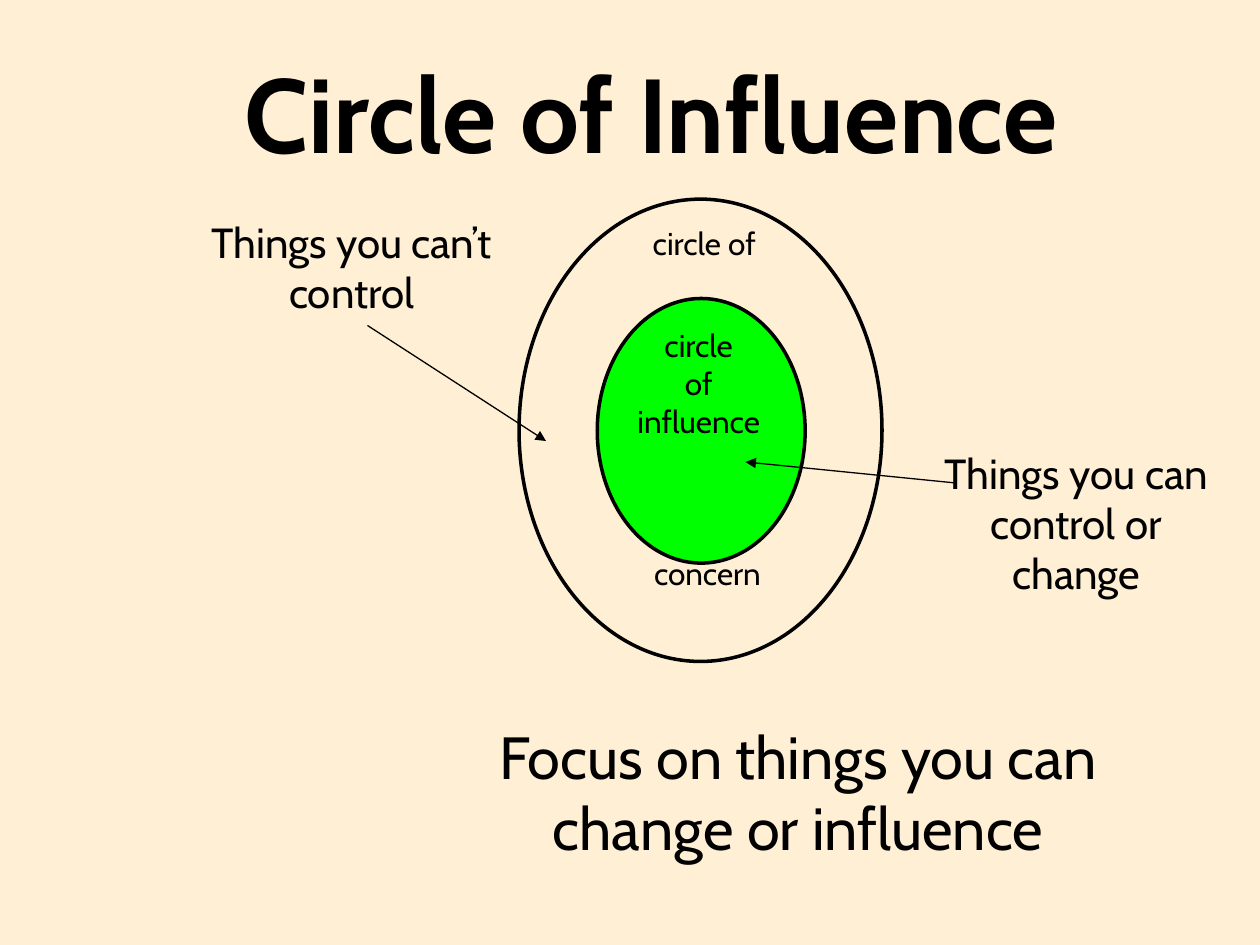
"""Build the Circle of Influence slide."""
from dataclasses import dataclass
from typing import Optional

from pptx import Presentation
from pptx.dml.color import RGBColor
from pptx.enum.shapes import MSO_CONNECTOR as Conn, MSO_SHAPE as Shape
from pptx.enum.text import MSO_ANCHOR as Anchor, MSO_AUTO_SIZE as AutoSize, PP_ALIGN as Align
from pptx.oxml.ns import qn
from pptx.util import Pt
from lxml.etree import SubElement

CREAM = RGBColor(0xFF, 0xEF, 0xD5)
GREEN = RGBColor(0x00, 0xFF, 0x00)
BLACK = RGBColor(0x00, 0x00, 0x00)
FONT = "Cabin"


@dataclass(frozen=True)
class Box:
    left: float
    top: float
    width: float
    height: float

    def lengths(self) -> tuple:
        return Pt(self.left), Pt(self.top), Pt(self.width), Pt(self.height)


@dataclass(frozen=True)
class Label:
    box: Box
    lines: tuple
    size: int
    wrap: bool = True


@dataclass(frozen=True)
class Circle:
    box: Box
    fill: Optional[RGBColor] = None


@dataclass(frozen=True)
class Arrow:
    x1: float
    y1: float
    x2: float
    y2: float


TITLE = Label(Box(48, 24, 648, 79.2), ("Circle of Influence",), 60)
CIRCLES = (
    Circle(Box(341.3, 170.6, 118.8, 151.2), GREEN),
    Circle(Box(296.6, 113.8, 207.4, 264.2)),
)
CIRCLE_LABELS = (
    Label(Box(356.4, 182.9, 85.7, 72), ("circle", "of", "influence"), 18, False),
    Label(Box(364.3, 124.6, 76.3, 28.8), ("circle of",), 18, False),
    Label(Box(365.8, 313.2, 77, 28.8), ("concern",), 18, False),
)
NOTES = (
    Label(Box(228, 408, 456, 88.6), ("Focus on things you can change or influence",), 34),
    Label(Box(108, 120, 186, 64.8), ("Things you can’t control",), 24),
    Label(Box(528, 252, 174, 93.6), ("Things you can control or change",), 24),
)
ARROWS = (Arrow(210, 186, 312, 252), Arrow(546, 276, 426, 264))


def write_text(sp, label: Label, bold: bool = False) -> None:
    tf = sp.text_frame
    tf.word_wrap = label.wrap
    tf.auto_size = AutoSize.NONE if bold else AutoSize.SHAPE_TO_FIT_TEXT
    tf.vertical_anchor = Anchor.TOP
    for i, line in enumerate(label.lines):
        p = tf.add_paragraph() if i else tf.paragraphs[0]
        p.alignment = Align.CENTER
        r = p.add_run()
        r.text = line
        r.font.name = FONT
        r.font.size = Pt(label.size)
        r.font.bold = bold
        r.font.color.rgb = BLACK


def add_label(shapes, label: Label) -> None:
    write_text(shapes.add_textbox(*label.box.lengths()), label)


def add_circle(shapes, circle: Circle) -> None:
    sp = shapes.add_shape(Shape.OVAL, *circle.box.lengths())
    sp.shadow.inherit = False
    if circle.fill is None:
        sp.fill.background()
    else:
        sp.fill.solid()
        sp.fill.fore_color.rgb = circle.fill
    sp.line.color.rgb = BLACK
    sp.line.width = Pt(2)


def add_arrow(shapes, a: Arrow) -> None:
    cx = shapes.add_connector(Conn.STRAIGHT, Pt(a.x1), Pt(a.y1), Pt(a.x2), Pt(a.y2))
    cx.line.color.rgb = BLACK
    cx.line.width = Pt(0.75)
    SubElement(cx.line._get_or_add_ln(), qn("a:tailEnd"), type="triangle")
    SubElement(cx._element.spPr, qn("a:effectLst"))


def main() -> None:
    prs = Presentation()
    prs.slide_width, prs.slide_height = Pt(720), Pt(540)
    s = prs.slides.add_slide(prs.slide_layouts[5])
    s.background.fill.solid()
    s.background.fill.fore_color.rgb = CREAM

    title = s.shapes.title
    title.left, title.top, title.width, title.height = TITLE.box.lengths()
    write_text(title, TITLE, bold=True)

    diagram = s.shapes.add_group_shape().shapes
    for circle in CIRCLES:
        add_circle(diagram, circle)
    for label in CIRCLE_LABELS:
        add_label(diagram, label)
    for label in NOTES:
        add_label(s.shapes, label)
    for arrow in ARROWS:
        add_arrow(s.shapes, arrow)
    prs.save("out.pptx")


if __name__ == "__main__":
    main()
